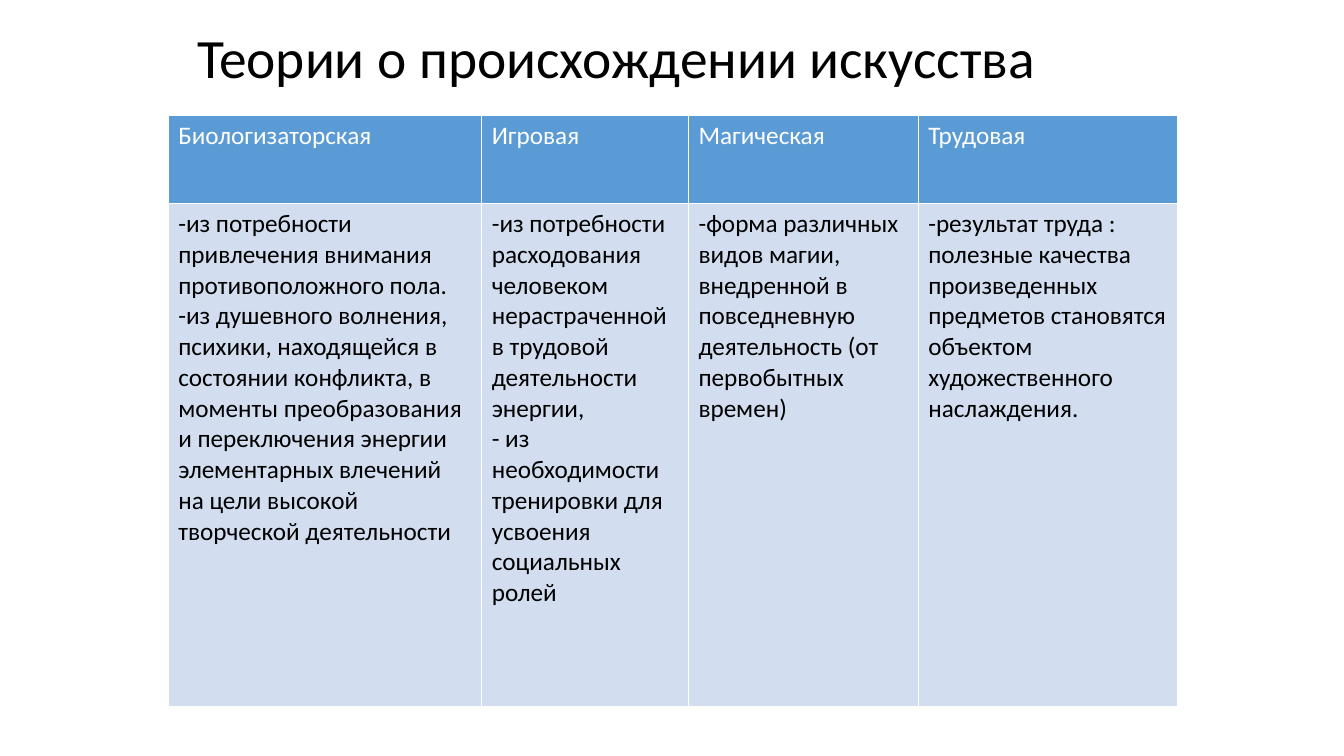
from lxml import etree
from pptx import Presentation
from pptx.dml.color import RGBColor
from pptx.enum.text import MSO_ANCHOR
from pptx.oxml.ns import qn
from pptx.util import Cm, Pt

MIDDLE = MSO_ANCHOR.MIDDLE
TOP = MSO_ANCHOR.TOP
COLORS = {"head": "5B9BD5", "body": "D2DEEF", "white": "FFFFFF", "black": "000000"}


def write(frame, text, size=18, color="black", space=1.0, anchor=TOP):
    frame.word_wrap = True
    frame.vertical_anchor = anchor
    for i, line in enumerate(text.split("\n")):
        para = frame.paragraphs[0] if i == 0 else frame.add_paragraph()
        para.line_spacing = space
        run = para.add_run()
        run.text = line
        run.font.name = "Calibri"
        run.font.size = Pt(size)
        run.font.bold = False
        run.font.color.rgb = RGBColor.from_string(COLORS[color])


def edge(cell):
    props = cell._tc.get_or_add_tcPr()
    for i, side in enumerate(("lnL", "lnR", "lnT", "lnB")):
        line = etree.Element(qn("a:" + side), w=str(Pt(1)))
        fill = etree.SubElement(line, qn("a:solidFill"))
        etree.SubElement(fill, qn("a:srgbClr"), val=COLORS["white"])
        props.insert(i, line)


deck = Presentation()
deck.slide_width = Cm(33.87)
deck.slide_height = Cm(19.05)
slide = deck.slides.add_slide(deck.slide_layouts[6])

title = slide.shapes.add_textbox(Cm(4.72), Cm(0.33), Cm(23.01), Cm(2.39))
write(title.text_frame, "Теории о происхождении искусства",
      size=39.6, space=0.9, anchor=MIDDLE)

theories = [
    ("Биологизаторская", 7.9,
     "-из потребности привлечения внимания противоположного пола.\n"
     "-из душевного волнения, психики, находящейся в состоянии конфликта, "
     "в моменты преобразования и переключения энергии элементарных влечений "
     "на цели высокой творческой деятельности"),
    ("Игровая", 5.21,
     "-из потребности расходования человеком нерастраченной "
     "в трудовой деятельности энергии,\n"
     "- из необходимости тренировки для усвоения социальных ролей"),
    ("Магическая", 5.79,
     "-форма различных видов магии, внедренной в повседневную "
     "деятельность (от первобытных времен)"),
    ("Трудовая", 6.53,
     "-результат труда : полезные качества произведенных предметов "
     "становятся объектом художественного наслаждения."),
]

table = slide.shapes.add_table(
    2, len(theories), Cm(4.24), Cm(2.92), Cm(25.43), Cm(14.88)).table
table.rows[0].height = Cm(2.21)
table.rows[1].height = Cm(12.67)

for col, (name, width, text) in enumerate(theories):
    table.columns[col].width = Cm(width)
    for row, (words, back, ink) in enumerate(
            [(name, "head", "white"), (text, "body", "black")]):
        cell = table.cell(row, col)
        cell.fill.solid()
        cell.fill.fore_color.rgb = RGBColor.from_string(COLORS[back])
        write(cell.text_frame, words, color=ink)
        edge(cell)

deck.save("out.pptx")
